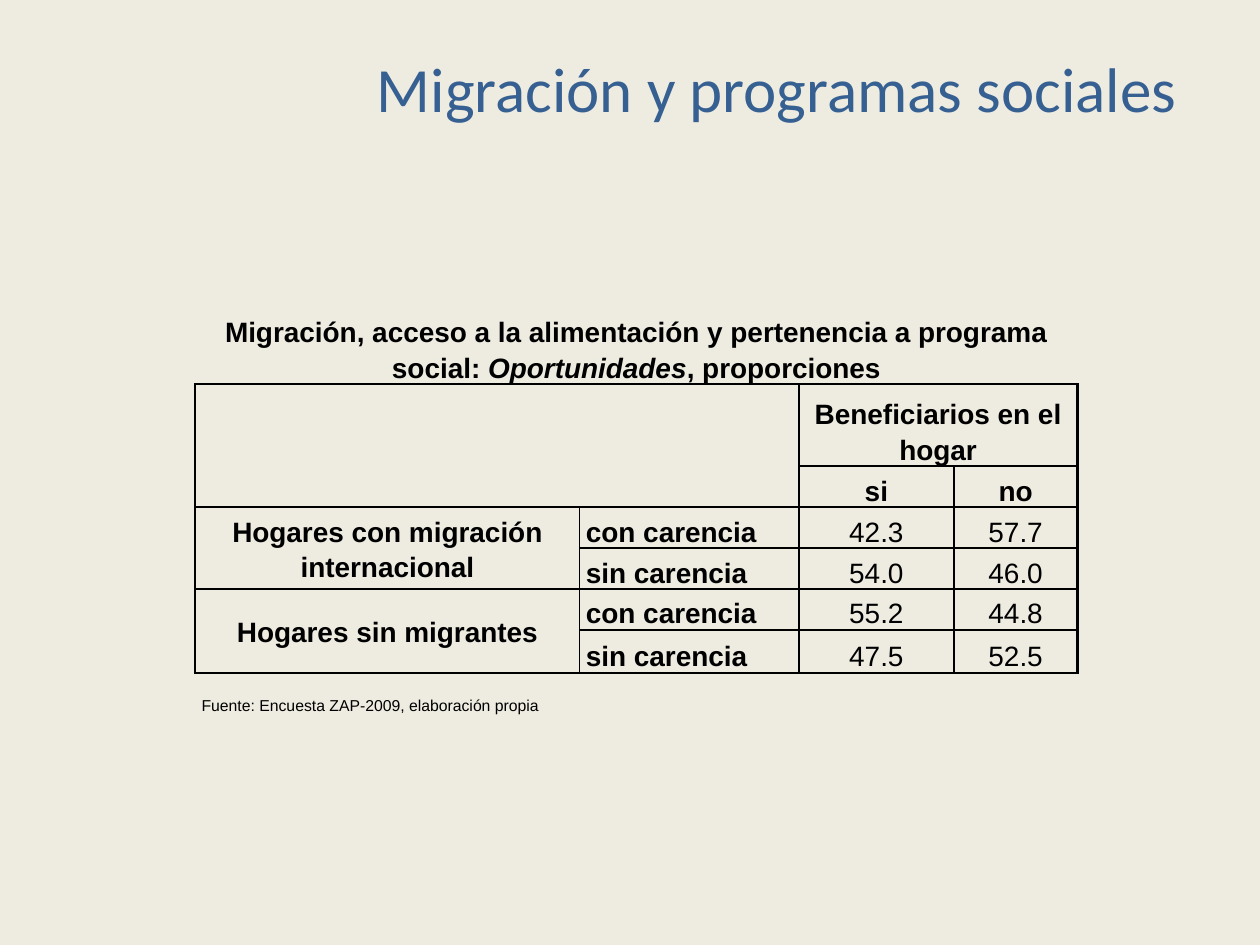
"""Builds a slide with a table on migration, food access and social programmes."""
from dataclasses import dataclass

from lxml import etree
from pptx import Presentation
from pptx.dml.color import RGBColor
from pptx.enum.text import MSO_ANCHOR as Anchor, PP_ALIGN as Align
from pptx.oxml.ns import qn
from pptx.util import Pt


@dataclass(frozen=True)
class Theme:
    background: str = "EEECE1"
    heading: str = "376092"
    ink: str = "000000"
    heading_font: str = "Calibri"
    table_font: str = "Arial"
    heading_size: float = 36
    table_size: float = 16
    source_size: float = 9
    frame_line: float = 1.5
    grid_line: float = 1


THEME = Theme()
NO_TABLE_STYLE = "{2D5ABB26-0587-4C30-8999-92F81FD0307C}"
TITLE = "Migración y programas sociales"
TITLE_BOX = (203.8, 21.6, 480.2, 56.2)
TABLE_ORIGIN = (111.6, 157)
COLUMN_WIDTHS = [219.6, 125.3, 88.6, 70.6]
ROW_HEIGHTS = [15.8, 46.8, 46.8, 23.4, 23.4, 23.4, 23.4, 24.5, 23.8]
CAPTION = [
    ("Migración, acceso a la alimentación y pertenencia a programa social: ", False),
    ("Oportunidades", True),
    (", proporciones", False),
]
ROWS = [
    ["", "", "", ""],
    [CAPTION, "", "", ""],
    ["", "", "Beneficiarios en el hogar", ""],
    ["", "", "si", "no"],
    ["Hogares con migración internacional", "con carencia", "42.3", "57.7"],
    ["", "sin carencia", "54.0", "46.0"],
    ["Hogares sin migrantes", "con carencia", "55.2", "44.8"],
    ["", "sin carencia", "47.5", "52.5"],
    ["Fuente: Encuesta ZAP-2009, elaboración propia", "", "", ""],
]
SPANS = {(0, 0): (1, 4), (1, 0): (1, 4), (2, 0): (2, 2), (2, 2): (1, 2),
         (4, 0): (2, 1), (6, 0): (2, 1), (8, 0): (1, 3)}
FRAME_TOP, FRAME_BOTTOM = 2, 8
SOURCE_ROW = 8


def write(frame, content, *, font, size, color, bold=False, align=Align.CENTER,
          anchor=Anchor.MIDDLE, spacing=None):
    """Write a string or (text, italic) pairs as one formatted paragraph."""
    frame.word_wrap = True
    frame.vertical_anchor = anchor
    para = frame.paragraphs[0]
    para.alignment = align
    para.line_spacing = spacing
    pieces = [(content, False)] if isinstance(content, str) else content
    for text, italic in pieces:
        span = para.add_run()
        span.text = text
        span.font.name = font
        span.font.size = Pt(size)
        span.font.bold = bold
        span.font.italic = italic
        span.font.color.rgb = RGBColor.from_string(color)


def region_of(row, column):
    """Return the top, left, bottom and right grid lines around a cell."""
    for (top, left), (height, width) in SPANS.items():
        if top <= row < top + height and left <= column < left + width:
            return top, left, top + height, left + width
    return row, column, row + 1, column + 1


def border_widths(row, column):
    """Return the line width of each side that has a border."""
    top, left, bottom, right = region_of(row, column)
    widths = {}
    if FRAME_TOP <= row < FRAME_BOTTOM:
        for side, line in (("L", left), ("R", right)):
            outer = line in (0, len(COLUMN_WIDTHS))
            widths[side] = THEME.frame_line if outer else THEME.grid_line
    for side, line in (("T", top), ("B", bottom)):
        if FRAME_TOP <= line <= FRAME_BOTTOM:
            outer = line in (FRAME_TOP, FRAME_BOTTOM)
            widths[side] = THEME.frame_line if outer else THEME.grid_line
    return widths


def draw_borders(cell, widths):
    properties = cell._tc.get_or_add_tcPr()
    for position, side in enumerate("LRTB"):
        line = etree.Element(qn(f"a:ln{side}"))
        if side in widths:
            line.set("w", str(Pt(widths[side])))
            fill = etree.SubElement(line, qn("a:solidFill"))
            etree.SubElement(fill, qn("a:srgbClr"), val=THEME.ink)
        else:
            line.set("w", "0")
            etree.SubElement(line, qn("a:noFill"))
        properties.insert(position, line)


def fill_cell(cell, content, row, column):
    cell.margin_left = cell.margin_right = Pt(3.6)
    cell.margin_top = cell.margin_bottom = 0
    cell.fill.background()
    draw_borders(cell, border_widths(row, column))
    if not content:
        etree.SubElement(cell.text_frame.paragraphs[0]._p, qn("a:endParaRPr"),
                         sz=str(int(THEME.source_size * 100)))
        return
    is_source = row == SOURCE_ROW
    is_group = column == 0 and row in (4, 6)
    is_value = row >= 4 and column >= 2
    write(cell.text_frame, content, font=THEME.table_font, color=THEME.ink,
          size=THEME.source_size if is_source else THEME.table_size,
          bold=not (is_value or is_source), spacing=1.15,
          align=Align.LEFT if is_source or column == 1 else Align.CENTER)
    cell.vertical_anchor = Anchor.MIDDLE if is_group else Anchor.BOTTOM


def add_data_table(page):
    left, top = TABLE_ORIGIN
    graphic = page.shapes.add_table(
        len(ROWS), len(COLUMN_WIDTHS), Pt(left), Pt(top),
        Pt(sum(COLUMN_WIDTHS)), Pt(sum(ROW_HEIGHTS)))
    table = graphic.table
    table.first_row = table.horz_banding = False
    table._tbl.tblPr.find(qn("a:tableStyleId")).text = NO_TABLE_STYLE
    for column, width in zip(table.columns, COLUMN_WIDTHS):
        column.width = Pt(width)
    for row, height in zip(table.rows, ROW_HEIGHTS):
        row.height = Pt(height)
    for (row, column), (height, width) in SPANS.items():
        table.cell(row, column).merge(table.cell(row + height - 1, column + width - 1))
    for row, contents in enumerate(ROWS):
        for column, content in enumerate(contents):
            fill_cell(table.cell(row, column), content, row, column)


def main():
    deck = Presentation()
    deck.slide_width, deck.slide_height = Pt(720), Pt(540)
    page = deck.slides.add_slide(deck.slide_layouts[5])
    page.background.fill.solid()
    page.background.fill.fore_color.rgb = RGBColor.from_string(THEME.background)
    title = page.shapes.title
    title.left, title.top, title.width, title.height = map(Pt, TITLE_BOX)
    write(title.text_frame, TITLE, font=THEME.heading_font,
          size=THEME.heading_size, color=THEME.heading)
    add_data_table(page)
    deck.save("out.pptx")


if __name__ == "__main__":
    main()
